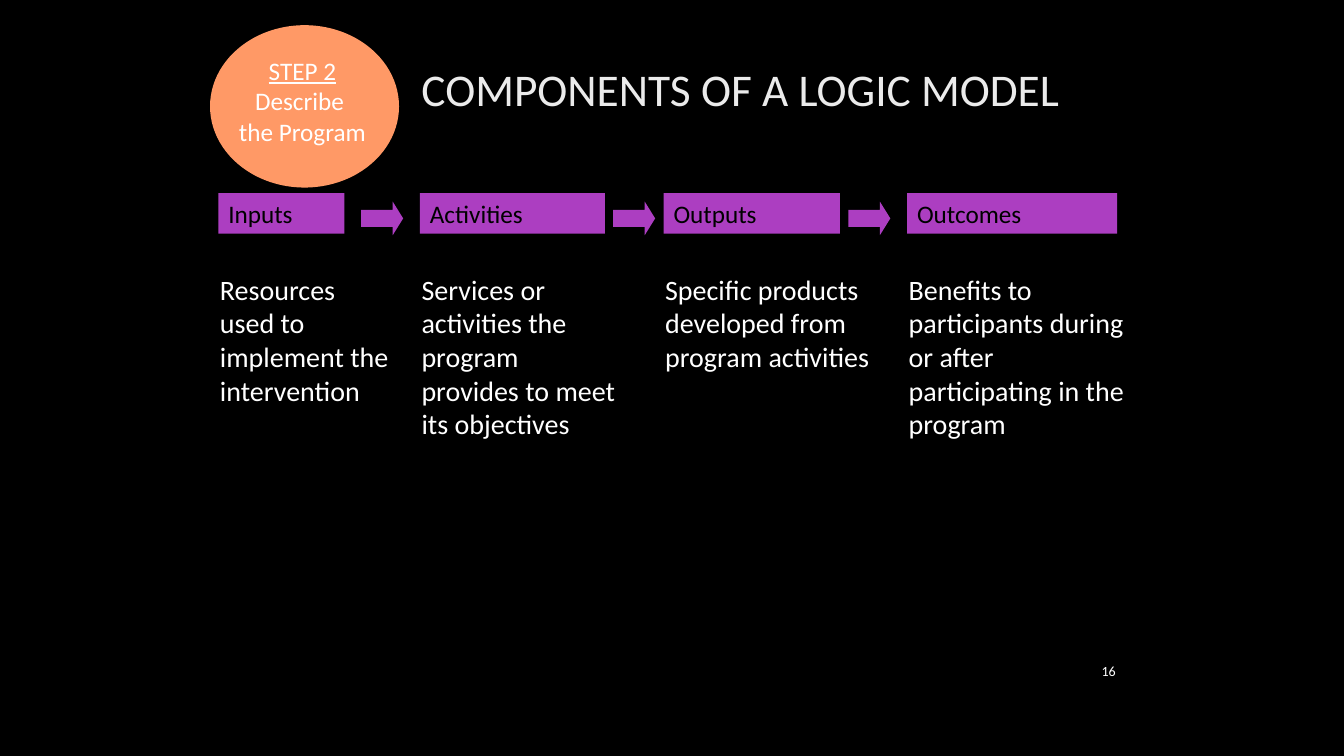
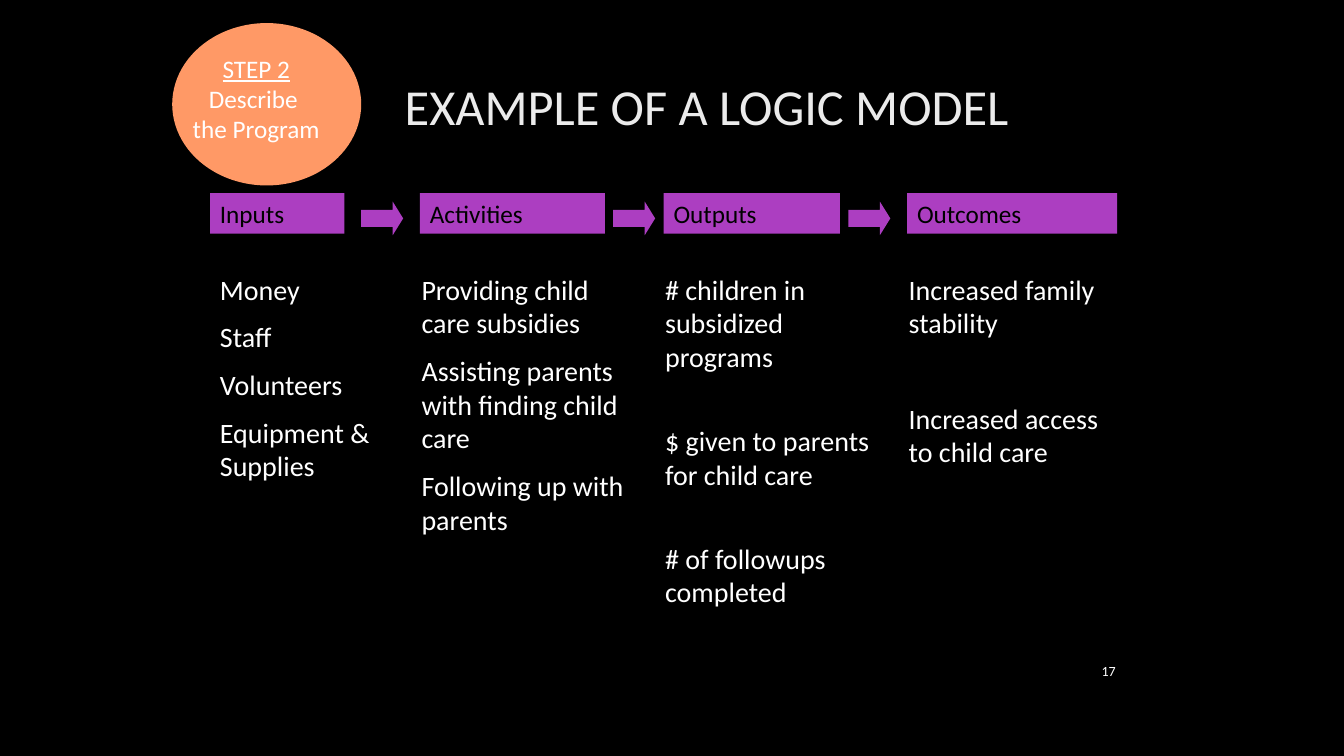
from pptx import Presentation
from pptx.dml.color import RGBColor
from pptx.enum.shapes import MSO_SHAPE
from pptx.enum.text import MSO_ANCHOR, PP_ALIGN
from pptx.util import Pt

RECT, OVAL, ARROW = MSO_SHAPE.RECTANGLE, MSO_SHAPE.OVAL, MSO_SHAPE.RIGHT_ARROW
LEFT, CENTER, RIGHT = PP_ALIGN.LEFT, PP_ALIGN.CENTER, PP_ALIGN.RIGHT
TOP, MIDDLE = MSO_ANCHOR.TOP, MSO_ANCHOR.MIDDLE

# Shared style
FONT = "Calibri"
BLACK, WHITE, TITLE_GREY = "000000", "FFFFFF", "EBEBEB"
PURPLE, ORANGE = "AC3EC1", "FF9966"

# Shared layout, in points
HEADERS = [("Inputs", 156, 120), ("Activities", 300, 132),
           ("Outputs", 474, 126), ("Outcomes", 648, 150)]  # name, right-hand bounds below
INPUTS_RIGHT = 246
ARROW_LEFTS = [258, 438, 606]
HEADER_TOP, HEADER_H = 138, 29
BODY_LEFTS, BODY_TOP = [150, 294, 468, 642], 191
BADGE = ["STEP 2", "Describe \vthe Program"]

# Content; each column is (width, gap between paragraphs, paragraphs)
SLIDES = [
    {"number": "16", "title": "COMPONENTS OF A LOGIC MODEL", "title_size": 32.4,
     "title_at": (294, 30), "badge_at": (150, 18), "badge_text_at": (150, 36),
     "inputs_left": 156,
     "columns": [
         (138, 0, ["Resources used to implement the intervention"]),
         (156, 0, ["Services or activities the program provides to meet its objectives"]),
         (168, 0, ["Specific products developed from program activities"]),
         (168, 0, ["Benefits to participants during or after participating in the program"]),
     ]},
    {"number": "17", "title": "EXAMPLE OF A LOGIC MODEL", "title_size": 36,
     "title_at": (282, 42), "badge_at": (123, 16.5), "badge_text_at": (117, 34.5),
     "inputs_left": 150,
     "columns": [
         (138, 10, ["Money", "Staff", "Volunteers", "Equipment & Supplies"]),
         (168, 10, ["Providing child care subsidies",
                    "Assisting parents with finding child care",
                    "Following up with parents"]),
         (174, 36, ["# children in subsidized programs",
                    "$ given to parents for child care",
                    "# of followups completed"]),
         (168, 44, ["Increased family stability", "Increased access to child care"]),
     ]},
]


def rgb(value):
    return RGBColor.from_string(value)


def write(shape, paragraphs, size, color, align=LEFT, anchor=TOP, gap=0):
    tf = shape.text_frame
    tf.word_wrap = True
    tf.vertical_anchor = anchor
    for i, text in enumerate(paragraphs):
        p = tf.add_paragraph() if i else tf.paragraphs[0]
        p.text = text
        p.alignment = align
        p.space_before = Pt(gap if i else 0)
        p.font.name, p.font.size = FONT, Pt(size)
        p.font.color.rgb = rgb(color)
    return tf


def add_text(s, x, y, w, h, paragraphs, size, color=WHITE, **style):
    box = s.shapes.add_textbox(Pt(x), Pt(y), Pt(w), Pt(h))
    return write(box, paragraphs, size, color, **style)


def add_filled(s, kind, x, y, w, h, fill):
    sp = s.shapes.add_shape(kind, Pt(x), Pt(y), Pt(w), Pt(h))
    sp.shadow.inherit = False
    sp.fill.solid()
    sp.fill.fore_color.rgb = rgb(fill)
    sp.line.fill.background()
    return sp


def build_slide(prs, data):
    s = prs.slides.add_slide(prs.slide_layouts[6])

    # Title and slide number
    add_text(s, *data["title_at"], 512, 66, [data["title"]], data["title_size"],
             TITLE_GREY, anchor=MIDDLE)
    add_text(s, 636, 464.4, 168, 29, [data["number"]], 10, align=RIGHT, anchor=MIDDLE)

    # Step badge
    add_filled(s, OVAL, *data["badge_at"], 135, 116, ORANGE)
    tf = add_text(s, *data["badge_text_at"], 132, 72, BADGE, 18, align=CENTER)
    tf.paragraphs[0].runs[0].font.underline = True

    # Column headers and text
    for i, (name, x, w) in enumerate(HEADERS):
        if i == 0:
            x = data["inputs_left"]
            w = INPUTS_RIGHT - x
        header = add_filled(s, RECT, x, HEADER_TOP, w, HEADER_H, PURPLE)
        write(header, [name], 18, BLACK)
        width, gap, paragraphs = data["columns"][i]
        add_text(s, BODY_LEFTS[i], BODY_TOP, width, 105, paragraphs, 20, gap=gap)

    # Arrows between headers
    for x in ARROW_LEFTS:
        arrow = add_filled(s, ARROW, x, 144, 30, 24, PURPLE)
        arrow.adjustments[1] = 0.31


def main():
    prs = Presentation()
    prs.slide_width, prs.slide_height = Pt(960), Pt(540)
    background = prs.slide_master.background.fill
    background.solid()
    background.fore_color.rgb = rgb(BLACK)
    for data in SLIDES:
        build_slide(prs, data)
    prs.save("out.pptx")


if __name__ == "__main__":
    main()
